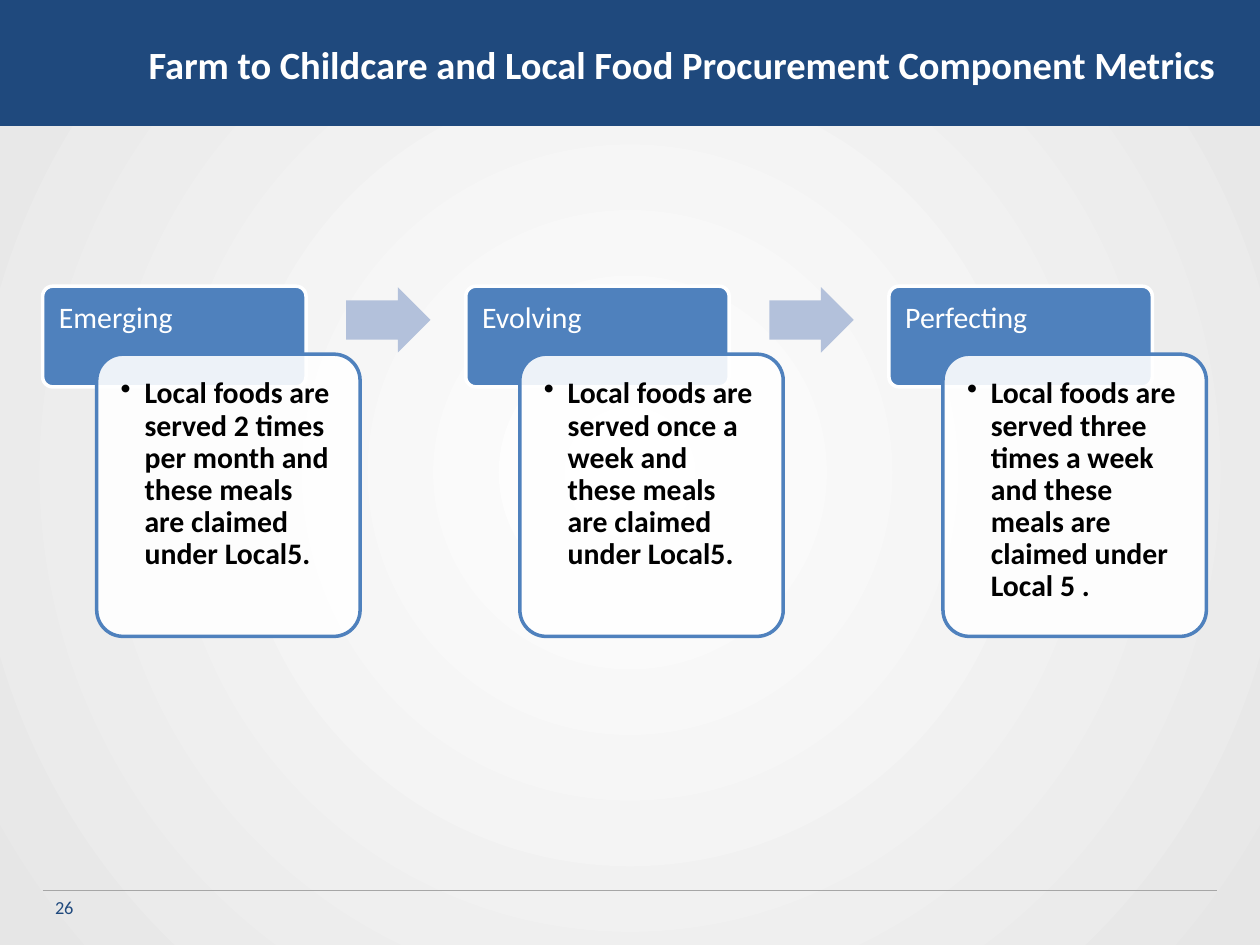
from lxml.etree import SubElement
from pptx import Presentation
from pptx.dml.color import RGBColor
from pptx.enum.shapes import MSO_CONNECTOR, MSO_SHAPE
from pptx.enum.text import MSO_ANCHOR, PP_ALIGN
from pptx.oxml.ns import qn
from pptx.util import Cm, Pt

NAVY = RGBColor(0x1F, 0x49, 0x7D)
BLUE = RGBColor(0x4F, 0x81, 0xBD)
PALE = RGBColor(0xB3, 0xC1, 0xDB)
GREY = RGBColor(0xA6, 0xA6, 0xA6)
MIST = RGBColor(0xE6, 0xE6, 0xE6)
WHITE = RGBColor(0xFF, 0xFF, 0xFF)
BLACK = RGBColor(0, 0, 0)

STAGES = [
    ("Emerging", "Local foods are served 2 times per month and these meals are claimed under Local5."),
    ("Evolving", "Local foods are served once a week and these meals are claimed under Local5."),
    ("Perfecting", "Local foods are served three times a week and these meals are claimed under Local 5 ."),
]
LEFT, TOP, STEP, WIDTH = 0.86, 5.77, 8.53, 5.31


def add_box(kind, x, y, w, h, fill, line=None):
    box = slide.shapes.add_shape(kind, Cm(x), Cm(y), Cm(w), Cm(h))
    box.shadow.inherit = False
    box.fill.solid()
    box.fill.fore_color.rgb = fill
    if line is None:
        box.line.fill.background()
    else:
        box.line.color.rgb = line
        box.line.width = Pt(2)
    return box


def set_text(shape, text, size, color, bold=False, inset=None, bullet=False):
    """Fill a shape with one left-aligned paragraph; inset is in cm."""
    frame = shape.text_frame
    frame.word_wrap = True
    frame.text = text
    para = frame.paragraphs[0]
    para.alignment = PP_ALIGN.LEFT
    if inset is not None:
        frame.vertical_anchor = MSO_ANCHOR.TOP
        frame.margin_left = frame.margin_right = Cm(inset)
        frame.margin_top = frame.margin_bottom = Cm(inset)
        para.line_spacing = 0.9
    if bullet:
        props = para._p.get_or_add_pPr()
        props.set("marL", str(Cm(0.48)))
        props.set("indent", str(-Cm(0.48)))
        SubElement(props, qn("a:buChar")).set("char", "•")
    font = para.runs[0].font
    font.name, font.size, font.bold = "Calibri", Pt(size), bold
    font.color.rgb = color


deck = Presentation()
deck.slide_width, deck.slide_height = Cm(25.4), Cm(19.05)
slide = deck.slides.add_slide(deck.slide_layouts[5])

# Radial background, white in the middle
back = slide.background.fill
back.gradient()
for stop, color in zip(back.gradient_stops, (WHITE, MIST)):
    stop.color.rgb = color
grad = next(slide.element.iter(qn("a:gradFill")))
grad.remove(grad.find(qn("a:lin")))
ring = SubElement(grad, qn("a:path"))
ring.set("path", "circle")
focus = SubElement(ring, qn("a:fillToRect"))
for side in "ltrb":
    focus.set(side, "50000")

# Title band and footer
band = add_box(MSO_SHAPE.RECTANGLE, 0, -0.02, 25.4, 2.56, NAVY)
title = slide.shapes.title
band.element.addnext(title.element)
title.left, title.top, title.width, title.height = Cm(2.74), Cm(0.69), Cm(22.3), Cm(1.19)
set_text(title, "Farm to Childcare and Local Food Procurement Component Metrics", 22, WHITE, bold=True)

rule = slide.shapes.add_connector(MSO_CONNECTOR.STRAIGHT, Cm(LEFT), Cm(17.95), Cm(24.54), Cm(17.95))
rule.line.color.rgb = GREY
rule.line.width = Pt(0.25)
SubElement(rule.element.spPr, qn("a:effectLst"))
number = slide.shapes.add_textbox(Cm(LEFT), Cm(17.95), Cm(5.92), Cm(1.02))
set_text(number, "26", 10.5, NAVY)

# One heading and one card per stage, with arrows between
for i, (name, goal) in enumerate(STAGES):
    x = LEFT + i * STEP
    head = add_box(MSO_SHAPE.ROUNDED_RECTANGLE, x, TOP, WIDTH, 2.03, BLUE, WHITE)
    head.adjustments[0] = 0.1
    set_text(head, name, 17, WHITE, inset=0.27)

    card = add_box(MSO_SHAPE.ROUNDED_RECTANGLE, x + 1.09, TOP + 1.37, WIDTH, 5.69, WHITE, BLUE)
    card.adjustments[0] = 0.1
    tint = card.element.spPr.find(qn("a:solidFill"))[0]
    SubElement(tint, qn("a:alpha")).set("val", "90000")
    set_text(card, goal, 17, BLACK, bold=True, inset=0.33, bullet=True)

    if i < len(STAGES) - 1:
        arrow = add_box(MSO_SHAPE.RIGHT_ARROW, x + 6.12, TOP + 0.02, 1.7, 1.32, PALE)
        arrow.adjustments[0] = 0.6

deck.save("out.pptx")
